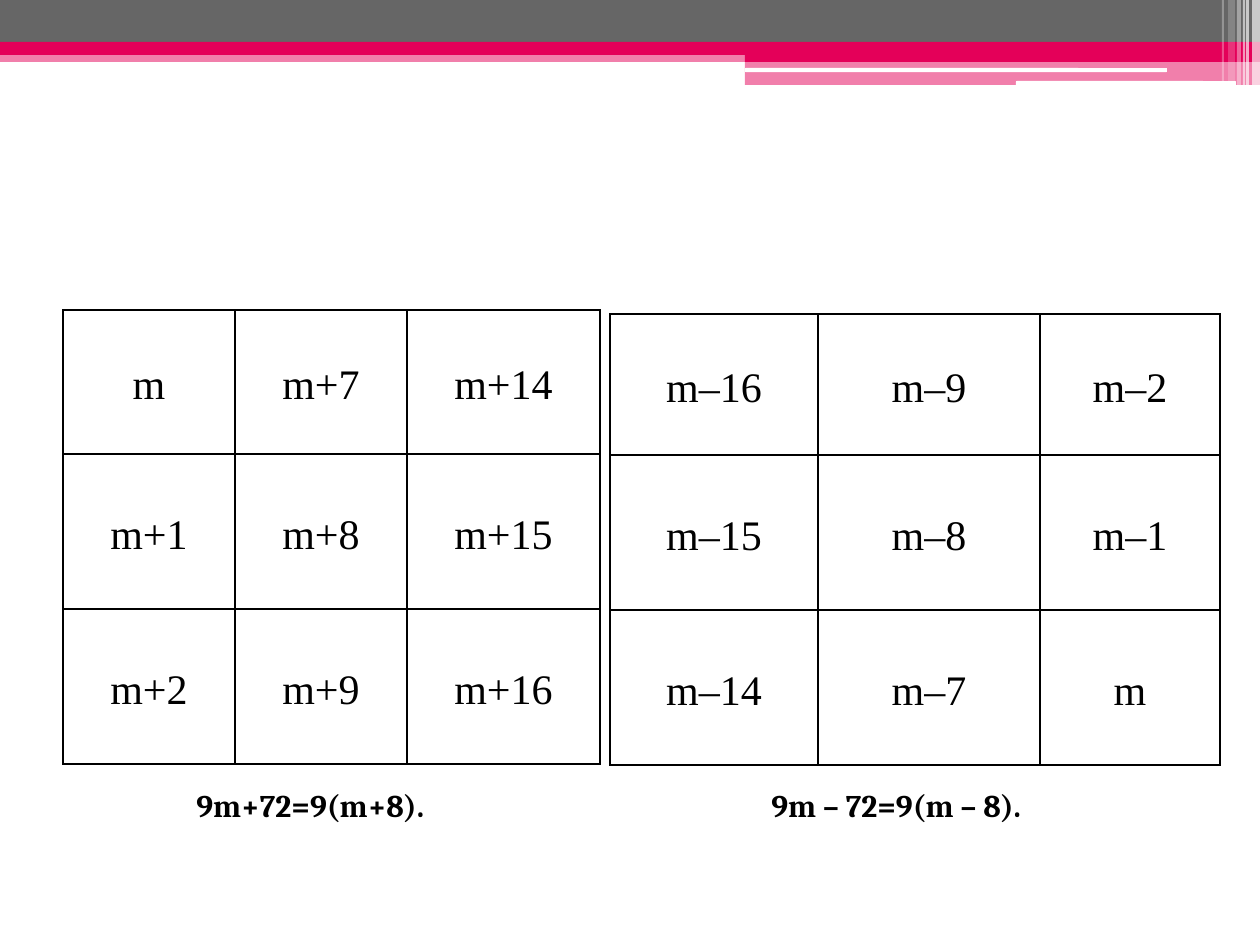
from lxml import etree
from pptx import Presentation
from pptx import util as u
from pptx.dml.color import RGBColor
from pptx.enum import shapes, text
from pptx.oxml.ns import qn

EMU_PER_PX = 914400 / 126
PINK, GREY, WHITE, BLACK = "E40059", "666666", "FFFFFF", "000000"


def px(length):
    return u.Emu(round(length * EMU_PER_PX))


def color(value):
    return RGBColor.from_string(value)


def write(frame, content, font, size, bold=False, align=text.PP_ALIGN.LEFT, spacing=None):
    para = frame.paragraphs[0]
    para.alignment = align
    if spacing:
        para.line_spacing = spacing
    span = para.add_run()
    span.text = content
    span.font.name = font
    span.font.size = u.Pt(size)
    span.font.bold = bold
    span.font.color.rgb = color(BLACK)


class SlideBuilder:
    table_font = "Times New Roman"
    formula_font = "Cambria"

    def __init__(self, page):
        self.page = page

    def bar(self, left, top, width, height, fill, opacity=100, rounded=False):
        kind = shapes.MSO_SHAPE.ROUNDED_RECTANGLE if rounded else shapes.MSO_SHAPE.RECTANGLE
        bar = self.page.shapes.add_shape(kind, px(left), px(top), px(width), px(height))
        bar.shadow.inherit = False
        bar.line.fill.background()
        bar.fill.solid()
        bar.fill.fore_color.rgb = color(fill)
        if opacity < 100:
            solid = bar.fill._xPr.find(qn("a:solidFill"))
            etree.SubElement(solid[0], qn("a:alpha")).set("val", str(opacity * 1000))

    def border(self, cell):
        properties = cell._tc.get_or_add_tcPr()
        for index, side in enumerate(("lnL", "lnR", "lnT", "lnB")):
            line = etree.Element(qn(f"a:{side}"), w=str(u.Pt(1)))
            solid = etree.SubElement(line, qn("a:solidFill"))
            etree.SubElement(solid, qn("a:srgbClr")).set("val", BLACK)
            properties.insert(index, line)

    def grid(self, left, top, widths, heights, rows):
        frame = self.page.shapes.add_table(
            len(heights), len(widths), px(left), px(top), px(sum(widths)), px(sum(heights)))
        table = frame.table
        table.first_row = table.horz_banding = False
        for column, width in zip(table.columns, widths):
            column.width = px(width)
        for row, height, labels in zip(table.rows, heights, rows):
            row.height = px(height)
            for cell, label in zip(row.cells, labels):
                cell.fill.background()
                cell.vertical_anchor = text.MSO_ANCHOR.MIDDLE
                cell.margin_left = cell.margin_right = px(9)
                cell.margin_top = cell.margin_bottom = 0
                write(cell.text_frame, label, self.table_font, 24,
                      align=text.PP_ALIGN.CENTER, spacing=1.15)
                self.border(cell)

    def formula(self, left, top, width, height, content):
        box = self.page.shapes.add_textbox(px(left), px(top), px(width), px(height))
        box.text_frame.word_wrap = False
        box.text_frame.auto_size = text.MSO_AUTO_SIZE.SHAPE_TO_FIT_TEXT
        write(box.text_frame, content, self.formula_font, 18, bold=True)


def term(offset):
    if offset == 0:
        return "m"
    return f"m+{offset}" if offset > 0 else f"m–{-offset}"


def calendar_square(first):
    """Days run down each column, weeks run across."""
    return [[term(first + day + 7 * week) for week in range(3)] for day in range(3)]


def main():
    deck = Presentation()
    deck.slide_width, deck.slide_height = px(1260), px(945)
    slide = SlideBuilder(deck.slides.add_slide(deck.slide_layouts[6]))

    # Header bands
    slide.bar(0, 50, 1260, 12, PINK, 50)
    slide.bar(0, 0, 1260, 42, GREY)
    slide.bar(0, 42, 1260, 13, PINK)
    slide.bar(745, 49, 515, 13, PINK)
    slide.bar(745, 62, 515, 23, PINK, 50)
    slide.bar(745, 68, 422, 4, WHITE, rounded=True)
    slide.bar(1016, 81, 220, 5, WHITE, rounded=True)

    # Pale stripes at the right end of the header
    for left, width, height, opacity in (
            (1252, 8, 85, 65), (1246, 3, 85, 65), (1243, 2, 85, 60),
            (1237, 4, 85, 40), (1228, 7, 81, 20), (1222, 2, 81, 30)):
        slide.bar(left, 0, width, height, WHITE, opacity)

    # Squares counted from the first and from the last number
    slide.grid(63, 310, (172, 172, 193), (144, 155, 155), calendar_square(0))
    slide.grid(610, 314, (208, 222, 180), (141, 155, 155), calendar_square(-16))

    # Sums of the squares
    slide.formula(184, 780, 304, 50, "9m+72=9(m+8).")
    slide.formula(759, 780, 329, 50, "9m – 72=9(m – 8).")

    deck.save("out.pptx")


if __name__ == "__main__":
    main()
